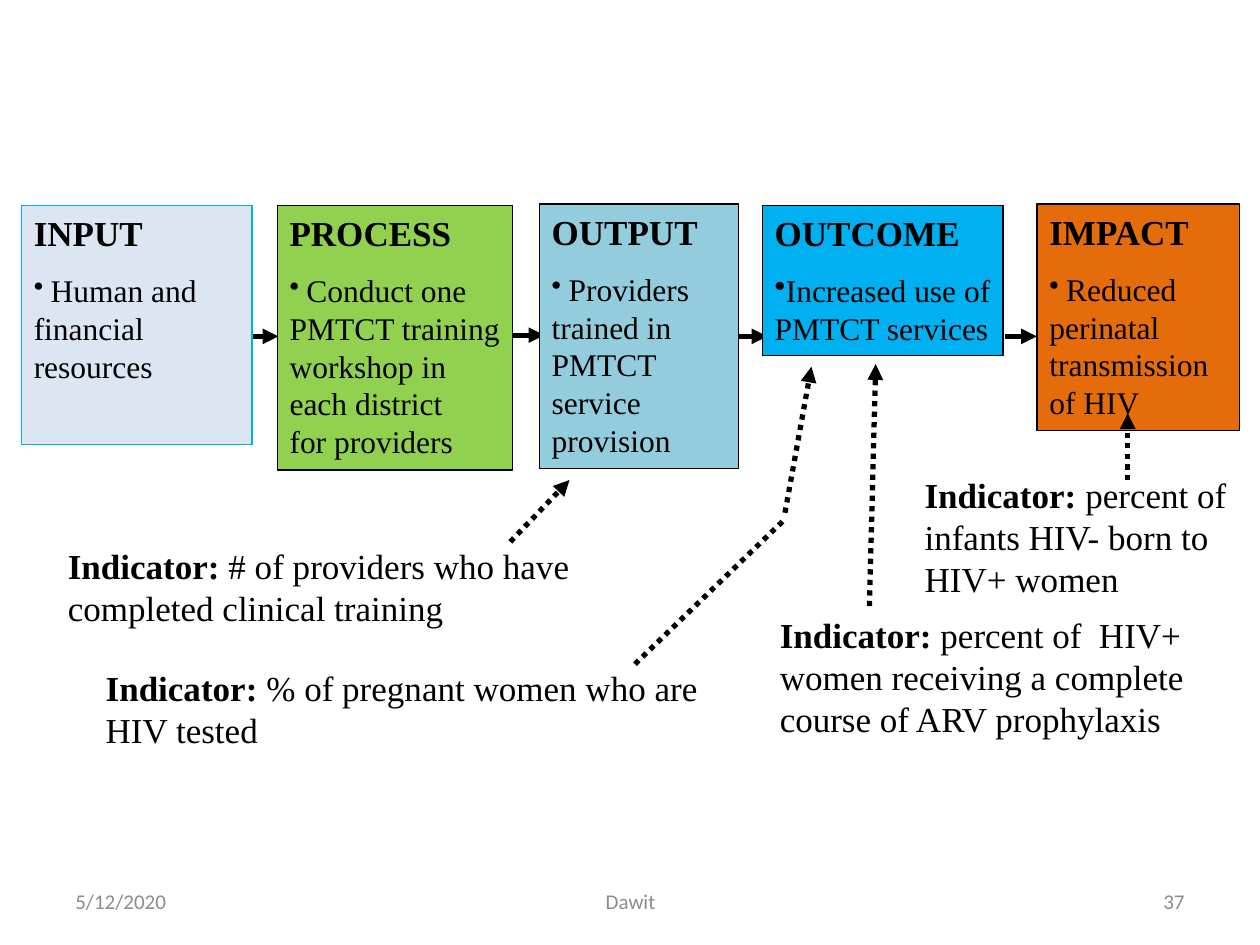
from dataclasses import dataclass

from lxml import etree
from pptx import Presentation
from pptx.dml.color import RGBColor
from pptx.enum.dml import MSO_LINE
from pptx.enum.shapes import MSO_CONNECTOR, MSO_SHAPE
from pptx.enum.text import MSO_ANCHOR, PP_ALIGN
from pptx.oxml.ns import qn
from pptx.util import Inches, Pt

RECT = MSO_SHAPE.RECTANGLE
STRAIGHT = MSO_CONNECTOR.STRAIGHT
DOTTED = MSO_LINE.ROUND_DOT  # stored as sysDot
TOP, MIDDLE = MSO_ANCHOR.TOP, MSO_ANCHOR.MIDDLE
LEFT, CENTER, RIGHT = PP_ALIGN.LEFT, PP_ALIGN.CENTER, PP_ALIGN.RIGHT
BLACK, GREY, CYAN = "000000", "8C8C8C", "00B0F0"
SERIF, SANS = "Times New Roman", "Calibri"


@dataclass
class Stage:
    title: str
    detail: str
    box: tuple[float, float, float, float]
    fill: str
    border: str = BLACK
    lead: str = " "


@dataclass
class Indicator:
    text: str
    box: tuple[float, float, float, float]


@dataclass
class Arrow:
    start: tuple[float, float]
    end: tuple[float, float]
    dotted: bool = True
    head: bool = True


@dataclass
class Footer:
    text: str
    left: float
    width: float
    align: PP_ALIGN


STAGES = [
    Stage("INPUT", "Human and financial resources",
          (0.17, 1.63, 1.83, 1.9), "DCE6F2", CYAN),
    Stage("PROCESS", "Conduct one PMTCT training workshop in each district \nfor providers",
          (2.2, 1.63, 1.87, 2.1), "92D050"),
    Stage("OUTPUT", "Providers trained in PMTCT service provision",
          (4.28, 1.62, 1.58, 2.1), "93CDDD"),
    Stage("OUTCOME", "Increased use of PMTCT services",
          (6.05, 1.63, 1.91, 1.19), CYAN, lead=""),
    Stage("IMPACT", "Reduced perinatal transmission of HIV",
          (8.23, 1.62, 1.61, 1.8), "E46C0A"),
]
STAGE_ARROWS = [
    Arrow((x1, y), (x2, y), dotted=False)
    for x1, x2, y in [(2, 2.21, 2.67), (4.07, 4.32, 2.66),
                      (5.84, 6.09, 2.67), (7.98, 8.23, 2.67)]
]
INDICATORS = [
    Indicator(" # of providers who have completed clinical training", (0.44, 4.27, 4.34, 0.77)),
    Indicator(" % of pregnant women who are HIV tested", (0.74, 5.24, 5.11, 0.77)),
    Indicator(" percent of  HIV+ women receiving a complete course of ARV prophylaxis",
              (6.09, 4.82, 3.42, 1.11)),
    Indicator(" percent of  infants HIV- born to HIV+ women", (7.24, 3.71, 2.84, 1.11)),
]
INDICATOR_ARROWS = [
    Arrow((4.05, 4.3), (4.52, 3.81)),
    Arrow((6.23, 4.07), (6.44, 2.91)),
    Arrow((6.21, 4.14), (5.02, 5.29), head=False),
    Arrow((6.9, 4.81), (6.95, 2.89)),
    Arrow((8.95, 3.81), (8.95, 3.28)),
]
FOOTERS = [
    Footer("37", 7.17, 2.33, RIGHT),
    Footer("5/12/2020", 0.5, 2.33, LEFT),
    Footer("Dawit", 3.42, 3.17, CENTER),
]


def rgb(value: str) -> RGBColor:
    return RGBColor.from_string(value)


def add_run(p, text: str, size: float, bold: bool = False,
            color: str = BLACK, name: str = SERIF) -> None:
    for i, line in enumerate(text.split("\n")):
        if i:
            p.add_line_break()
        r = p.add_run()
        r.text = line
        for key, value in {"size": Pt(size), "bold": bold, "name": name}.items():
            setattr(r.font, key, value)
        r.font.color.rgb = rgb(color)


def set_frame(tf, anchor: MSO_ANCHOR = TOP) -> None:
    layout = {
        "word_wrap": True, "vertical_anchor": anchor,
        "margin_left": Inches(0.1), "margin_right": Inches(0.1),
        "margin_top": Inches(0.05), "margin_bottom": Inches(0.05),
    }
    for key, value in layout.items():
        setattr(tf, key, value)


def add_bullet(p) -> None:
    pPr = p._p.get_or_add_pPr()
    pPr.set("marL", "0")
    pPr.set("indent", "0")
    etree.SubElement(pPr, qn("a:buChar"), char="•")


def add_stage(slide, stage: Stage) -> None:
    sp = slide.shapes.add_shape(RECT, *map(Inches, stage.box))
    sp.shadow.inherit = False
    sp.fill.solid()
    sp.fill.fore_color.rgb = rgb(stage.fill)
    sp.line.color.rgb = rgb(stage.border)
    sp.line.width = Pt(0.75)
    tf = sp.text_frame
    set_frame(tf)
    title, detail = tf.paragraphs[0], tf.add_paragraph()
    title.alignment = detail.alignment = LEFT
    add_run(title, stage.title, 20, bold=True)
    detail.space_before = Pt(10)
    add_bullet(detail)
    if stage.lead:
        add_run(detail, stage.lead, 16)
    add_run(detail, stage.detail, 18)


def add_arrow(slide, arrow: Arrow) -> None:
    cx = slide.shapes.add_connector(STRAIGHT, *map(Inches, arrow.start + arrow.end))
    cx.line.color.rgb = rgb(BLACK)
    cx.line.width = Pt(3)
    if arrow.dotted:
        cx.line.dash_style = DOTTED
    if arrow.head:
        etree.SubElement(cx.line._get_or_add_ln(), qn("a:tailEnd"), type="triangle")
    etree.SubElement(cx._element.spPr, qn("a:effectLst"))


def add_indicator(slide, indicator: Indicator) -> None:
    tf = slide.shapes.add_textbox(*map(Inches, indicator.box)).text_frame
    set_frame(tf)
    p = tf.paragraphs[0]
    add_run(p, "Indicator:", 20, bold=True)
    add_run(p, indicator.text, 20)


def add_footer(slide, footer: Footer) -> None:
    box = (footer.left, 6.95, footer.width, 0.4)
    tf = slide.shapes.add_textbox(*map(Inches, box)).text_frame
    set_frame(tf, MIDDLE)
    p = tf.paragraphs[0]
    p.alignment = footer.align
    add_run(p, footer.text, 12, color=GREY, name=SANS)


def main() -> None:
    prs = Presentation()
    prs.slide_width, prs.slide_height = Inches(10), Inches(7.5)
    slide = prs.slides.add_slide(prs.slide_layouts[6])

    # Results chain: arrows lie behind the stages
    for arrow in STAGE_ARROWS:
        add_arrow(slide, arrow)
    for stage in STAGES:
        add_stage(slide, stage)

    # Indicators and their pointers
    for indicator in INDICATORS:
        add_indicator(slide, indicator)
    for arrow in INDICATOR_ARROWS:
        add_arrow(slide, arrow)

    # Footer line
    for footer in FOOTERS:
        add_footer(slide, footer)

    prs.save("out.pptx")


if __name__ == "__main__":
    main()
